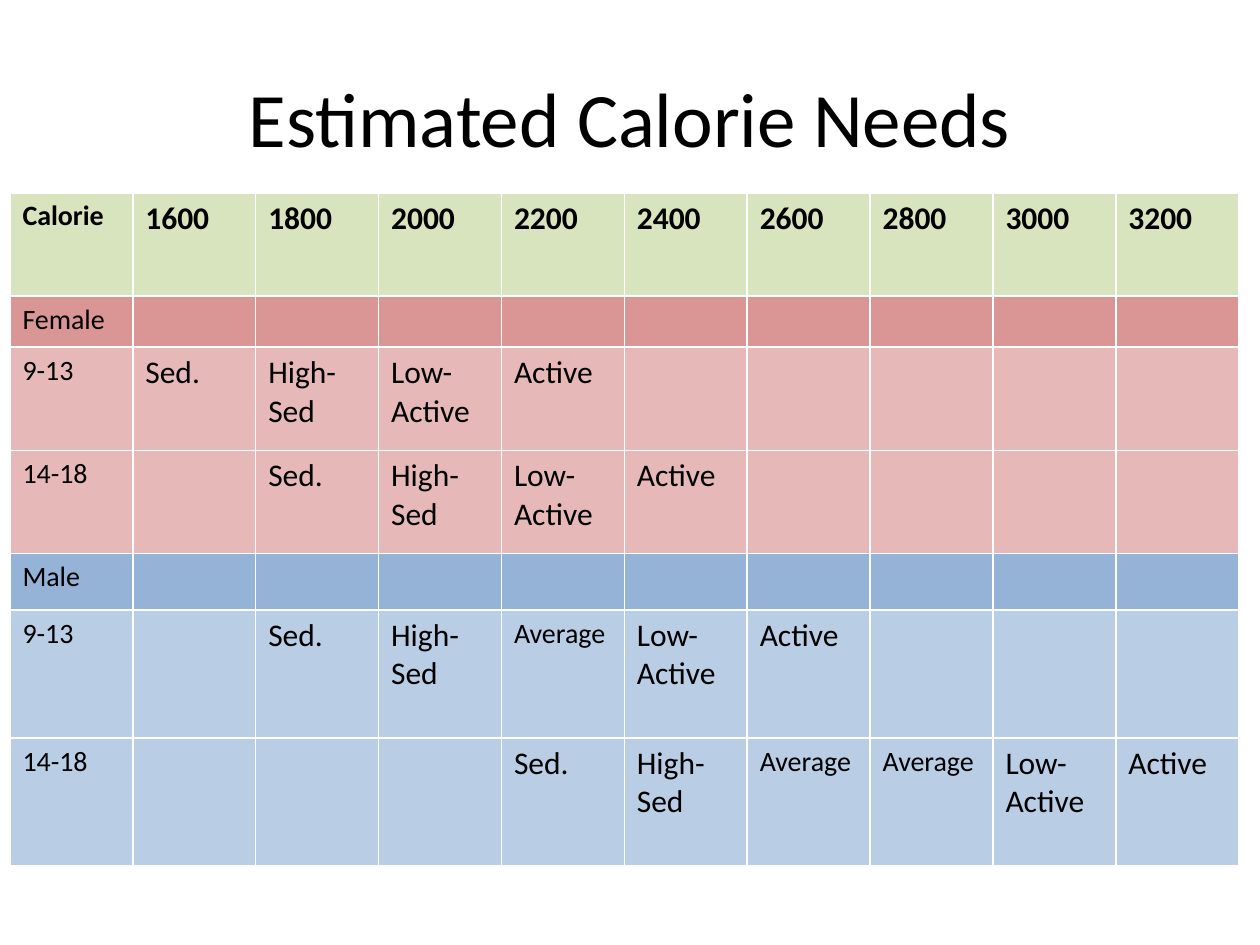
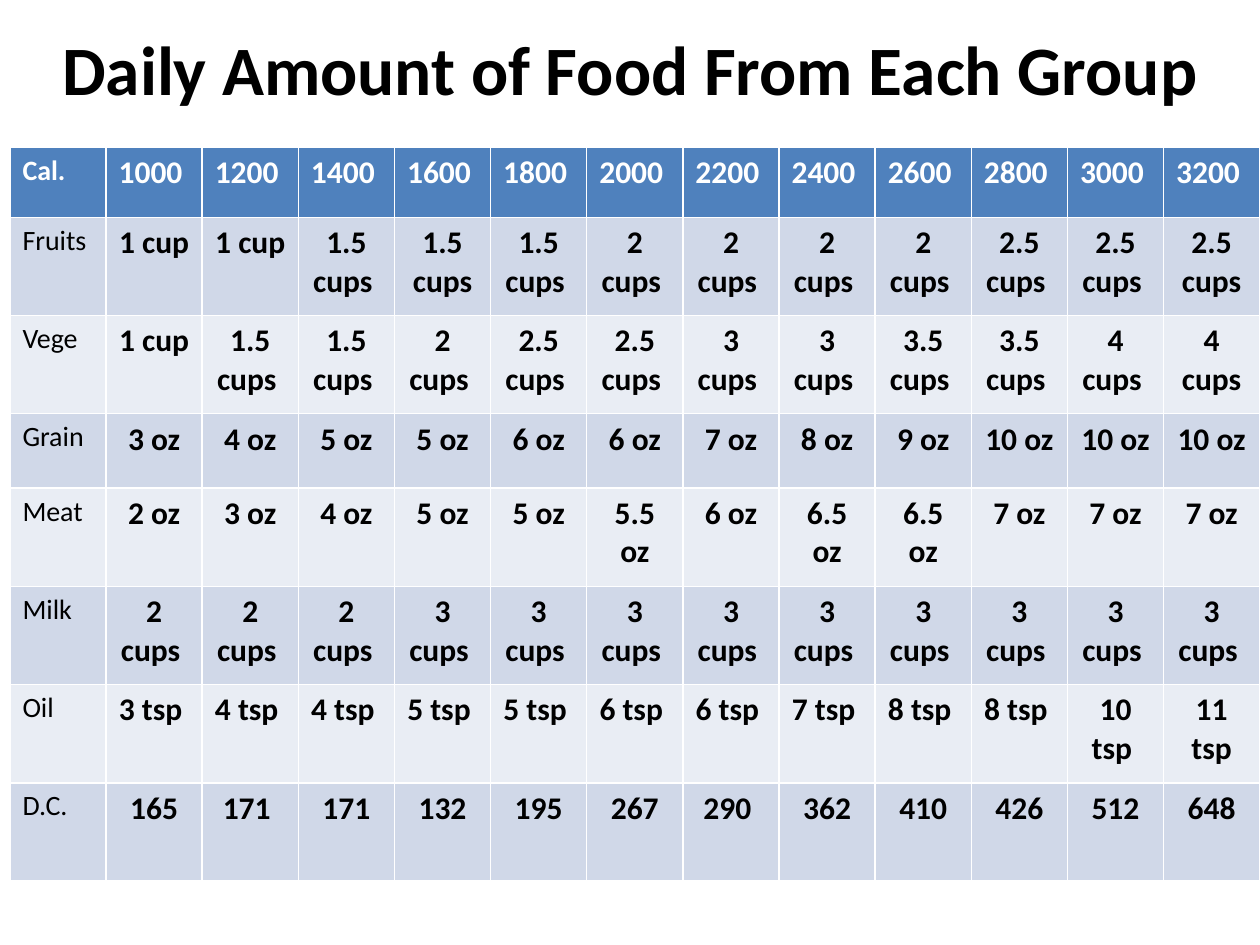
"""Build two slides of tables on calorie needs and daily food amounts."""
from dataclasses import dataclass

from pptx import Presentation
from pptx.dml.color import RGBColor
from pptx.enum.text import MSO_ANCHOR, MSO_AUTO_SIZE, PP_ALIGN
from pptx.presentation import Presentation as Deck
from pptx.slide import Slide
from pptx.table import _Cell
from pptx.text.text import TextFrame
from pptx.util import Cm, Pt


@dataclass(frozen=True)
class Theme:
    """Colours, font and type sizes."""
    font: str = "Calibri"
    black: str = "000000"
    white: str = "FFFFFF"
    green: str = "D7E4BD"
    rose: str = "D99694"
    pale_rose: str = "E6B9B8"
    sky: str = "95B3D7"
    pale_sky: str = "B9CDE5"
    blue: str = "4F81BD"
    band_dark: str = "D0D8E8"
    band_light: str = "E9EDF4"
    title: float = 44
    long_title: float = 39.6
    value: float = 18
    label: float = 16


THEME = Theme()


@dataclass(frozen=True)
class Box:
    """Position and size in centimetres."""
    left: float
    top: float
    width: float
    height: float


@dataclass(frozen=True)
class Title:
    """Wording and look of a slide title."""
    text: str
    box: Box
    size: float
    bold: bool = False
    anchor: MSO_ANCHOR = MSO_ANCHOR.MIDDLE
    margin_top: float = 0.13


@dataclass(frozen=True)
class Row:
    """One table row, its cells divided by bars."""
    text: str
    fill: str
    height: float


@dataclass(frozen=True)
class Grid:
    """A table with equal columns and a bold header row."""
    left: float
    top: float
    width: float
    rows: tuple[Row, ...]
    header_color: str
    small_words: tuple[str, ...] = ()
    bold_values: bool = False
    value_align: PP_ALIGN = PP_ALIGN.LEFT


CALORIE_TITLE = Title("Estimated Calorie Needs", Box(1.27, 0.76, 22.86, 3.18), THEME.title)
CALORIE_GRID = Grid(0.2, 3.89, 24.77, (
    Row("Calorie|1600|1800|2000|2200|2400|2600|2800|3000|3200", THEME.green, 2.08),
    Row("Female", THEME.rose, 1.03),
    Row("9-13|Sed.|High-Sed|Low-Active|Active", THEME.pale_rose, 2.08),
    Row("14-18||Sed.|High-Sed|Low-Active|Active", THEME.pale_rose, 2.08),
    Row("Male", THEME.sky, 1.14),
    Row("9-13||Sed.|High-Sed|Average|Low-Active|Active", THEME.pale_sky, 2.58),
    Row("14-18||||Sed.|High-Sed|Average|Average|Low-Active|Active", THEME.pale_sky, 2.58),
), THEME.black, small_words=("Average",))

FOOD_TITLE = Title("Daily Amount of Food From Each Group", Box(0.64, 0.52, 24.13, 3.18),
                   THEME.long_title, True, MSO_ANCHOR.TOP, 0)
FOOD_GRID = Grid(0.2, 2.97, 25.2, (
    Row("Cal.|1000|1200|1400|1600|1800|2000|2200|2400|2600|2800|3000|3200", THEME.blue, 1.41),
    Row("Fruits|1 cup |1 cup |1.5 cups |1.5 cups|1.5 cups |2 cups |2 cups |2 cups |2 cups "
        "|2.5 cups |2.5 cups |2.5 cups", THEME.band_dark, 1.98),
    Row("Vege|1 cup |1.5 cups |1.5 cups |2 cups |2.5 cups |2.5 cups |3 cups |3 cups "
        "|3.5 cups |3.5 cups |4 cups |4 cups", THEME.band_light, 1.98),
    Row("Grain|3 oz|4 oz|5 oz|5 oz|6 oz|6 oz|7 oz|8 oz|9 oz|10 oz|10 oz|10 oz",
        THEME.band_dark, 1.5),
    Row("Meat|2 oz|3 oz|4 oz|5 oz|5 oz|5.5 oz|6 oz|6.5 oz|6.5 oz|7 oz|7 oz|7 oz",
        THEME.band_light, 1.98),
    Row("Milk" + "|2 cups " * 3 + "|3 cups " * 9, THEME.band_dark, 1.98),
    Row("Oil|3 tsp |4 tsp |4 tsp |5 tsp |5 tsp |6 tsp |6 tsp |7 tsp |8 tsp |8 tsp "
        "|10 tsp |11 tsp", THEME.band_light, 1.98),
    Row("D.C.|165|171 |171|132|195|267|290 |362|410|426|512|648", THEME.band_dark, 1.98),
), THEME.white, bold_values=True, value_align=PP_ALIGN.CENTER)


def add_text(tf: TextFrame, text: str, size: float, color: str, bold: bool,
             align: PP_ALIGN) -> None:
    """Write one formatted run in the first paragraph."""
    p = tf.paragraphs[0]
    p.alignment = align
    r = p.add_run()
    r.text = text
    r.font.name = THEME.font
    r.font.size = Pt(size)
    r.font.bold = bold
    r.font.color.rgb = RGBColor.from_string(color)


def set_title(s: Slide, title: Title) -> None:
    """Place and fill the title placeholder."""
    sp = s.shapes.title
    box = title.box
    sp.left, sp.top, sp.width, sp.height = map(Cm, (box.left, box.top, box.width, box.height))
    tf = sp.text_frame
    tf.word_wrap = True
    tf.auto_size = MSO_AUTO_SIZE.NONE
    tf.vertical_anchor = title.anchor
    tf.margin_top = Cm(title.margin_top)
    add_text(tf, title.text, title.size, THEME.black, title.bold, PP_ALIGN.CENTER)


def fill_cell(cell: _Cell, text: str, grid: Grid, is_header: bool, is_label: bool) -> None:
    """Write a cell in the style of its place in the grid."""
    small = is_label or text in grid.small_words
    add_text(cell.text_frame, text,
             THEME.label if small else THEME.value,
             grid.header_color if is_header else THEME.black,
             is_header or (grid.bold_values and not is_label),
             PP_ALIGN.LEFT if is_header or is_label else grid.value_align)


def add_grid(s: Slide, grid: Grid) -> None:
    """Draw the table row by row."""
    columns = len(grid.rows[0].text.split("|"))
    height = sum(row.height for row in grid.rows)
    table = s.shapes.add_table(len(grid.rows), columns, Cm(grid.left), Cm(grid.top),
                               Cm(grid.width), Cm(height)).table
    for column in table.columns:
        column.width = Cm(grid.width / columns)
    for i, row in enumerate(grid.rows):
        table.rows[i].height = Cm(row.height)
        texts = row.text.split("|")
        for j in range(columns):
            cell = table.cell(i, j)
            cell.fill.solid()
            cell.fill.fore_color.rgb = RGBColor.from_string(row.fill)
            if j < len(texts) and texts[j]:
                fill_cell(cell, texts[j], grid, i == 0, j == 0)


def add_table_slide(prs: Deck, title: Title, grid: Grid) -> None:
    """Add a slide with a title and a table."""
    s = prs.slides.add_slide(prs.slide_layouts.get_by_name("Title Only"))
    set_title(s, title)
    add_grid(s, grid)


def main() -> None:
    """Build and save the deck."""
    prs = Presentation()
    prs.slide_width, prs.slide_height = Cm(25.4), Cm(19.05)
    add_table_slide(prs, CALORIE_TITLE, CALORIE_GRID)
    add_table_slide(prs, FOOD_TITLE, FOOD_GRID)
    prs.save("out.pptx")


if __name__ == "__main__":
    main()
